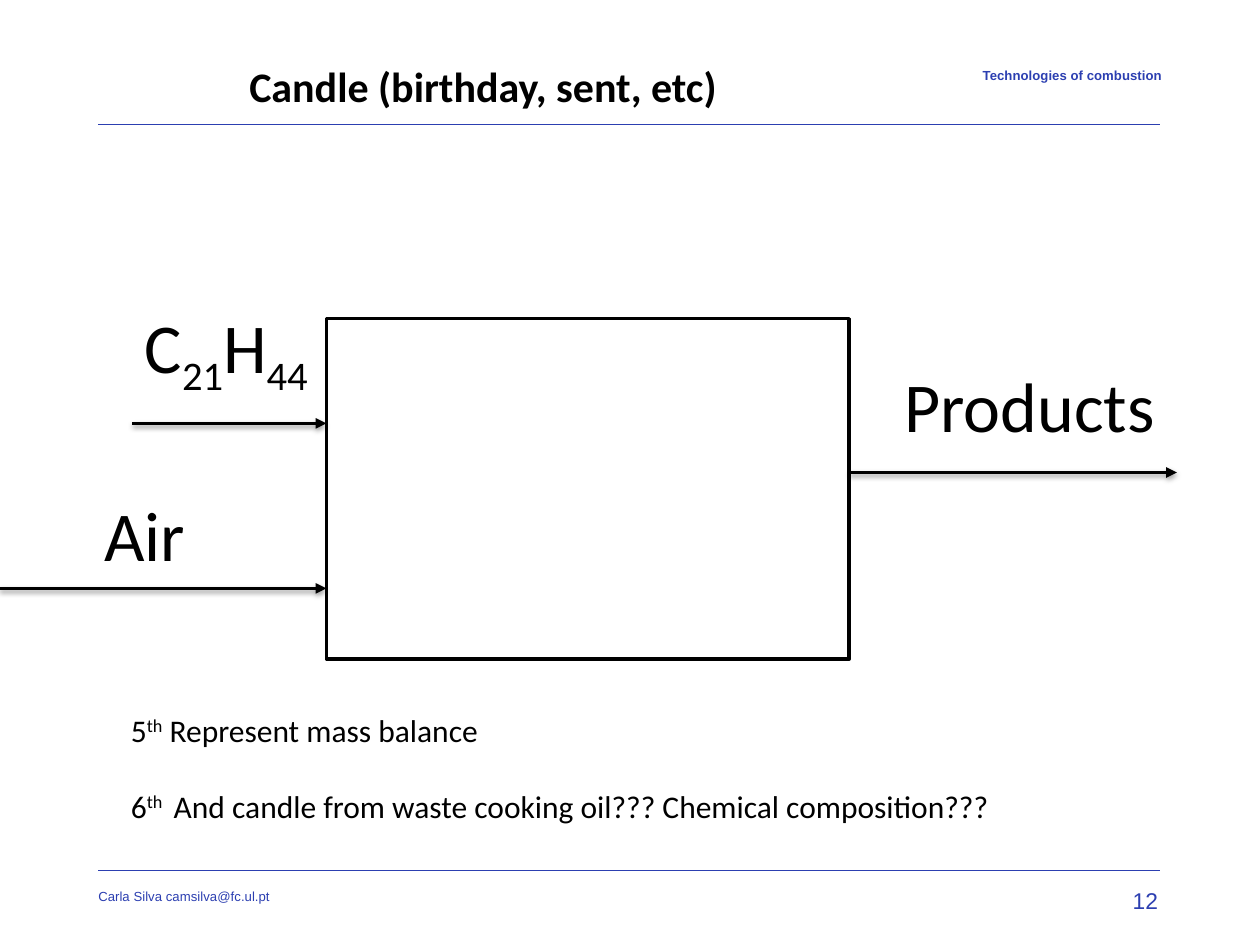
from lxml import etree
from pptx import Presentation
from pptx.dml.color import RGBColor
from pptx.enum.shapes import MSO_CONNECTOR, MSO_SHAPE
from pptx.enum.text import PP_ALIGN
from pptx.oxml.ns import qn
from pptx.util import Inches, Pt

STRAIGHT = MSO_CONNECTOR.STRAIGHT
RECTANGLE = MSO_SHAPE.RECTANGLE
LEFT, RIGHT = PP_ALIGN.LEFT, PP_ALIGN.RIGHT

BLUE = RGBColor(0x2C, 0x3F, 0xB1)
BLACK = RGBColor(0, 0, 0)
WHITE = RGBColor(255, 255, 255)

SUPER, SUB = 30, -25  # baseline shift in percent

# Page frame: left, top, width, height, alignment, paragraphs of (text, baseline)
FRAME_TEXTS = [
    (2.23, 0.46, 6.99, 0.25, RIGHT, [[("Technologies of combustion", SUPER)]], True),
    (0.78, 6.98, 6.99, 0.27, LEFT, [[("Carla Silva camsilva@fc.ul.pt", SUPER)]], False),
    (6.86, 6.99, 2.33, 0.4, RIGHT, [[("12", 0)]], False),
]
RULE_LEFT, RULE_RIGHT = 0.78, 9.21
RULE_YS = [0.99, 6.91]

# Slide texts: left, top, width, height, size, bold, paragraphs
SLIDE_TEXTS = [
    (1.88, 0.43, 4.15, 0.5, 24, True, [[("Candle (birthday, sent, etc)", 0)]]),
    (1.05, 2.36, 1.92, 0.77, 40, False,
     [[("C", 0), ("21", SUB), ("H", 0), ("44", SUB)]]),
    (0.73, 3.85, 1.92, 0.77, 40, False, [[("Air", 0)]]),
    (7.08, 2.83, 2.48, 0.77, 40, False, [[("Products", 0)]]),
    (0.94, 5.59, 7.3, 1.31, 18, False, [
        [("5", 0), ("th", SUPER), (" Represent mass balance", 0)],
        [("6", 0), ("th ", SUPER),
         (" And candle from waste cooking oil??? Chemical composition???", 0)],
    ]),
]
PARAGRAPH_GAP = 22

# Reactor box, and flows as (start x, end x, y)
BOX_LEFT, BOX_TOP, BOX_WIDTH, BOX_HEIGHT = 2.59, 2.53, 4.15, 2.7
BOX_RIGHT = BOX_LEFT + BOX_WIDTH
FLOWS = [
    (1.05, BOX_LEFT, 3.36),
    (0, BOX_LEFT, 4.67),
    (BOX_RIGHT, 9.34, 3.75),
]


def add_text(slide, place, paragraphs, font_name, size, color, bold=False,
             align=LEFT, margins=(0.1, 0.05)):
    frame = slide.shapes.add_textbox(*map(Inches, place)).text_frame
    frame.word_wrap = True
    frame.margin_left = frame.margin_right = Inches(margins[0])
    frame.margin_top = frame.margin_bottom = Inches(margins[1])
    for index, runs in enumerate(paragraphs):
        paragraph = frame.add_paragraph() if index else frame.paragraphs[0]
        paragraph.alignment = align
        if index:
            paragraph.space_before = Pt(PARAGRAPH_GAP)
        for text, baseline in runs:
            run = paragraph.add_run()
            run.text = text
            run.font.name = font_name
            run.font.size = Pt(size)
            run.font.bold = bold
            run.font.color.rgb = color
            if baseline:
                run.font._element.set("baseline", str(baseline * 1000))


def add_line(slide, x1, x2, y, color, width):
    """Add a horizontal line; return it with its empty effect list."""
    line = slide.shapes.add_connector(
        STRAIGHT, Inches(x1), Inches(y), Inches(x2), Inches(y))
    line.line.color.rgb = color
    line.line.width = Pt(width)
    effects = etree.SubElement(line._element.spPr, qn("a:effectLst"))
    return line, effects


def add_flow(slide, x1, x2, y):
    """Add an arrow with a soft shadow below it."""
    arrow, effects = add_line(slide, x1, x2, y, BLACK, 2)
    etree.SubElement(arrow.line._get_or_add_ln(), qn("a:tailEnd"), type="triangle")
    shadow = etree.SubElement(
        effects, qn("a:outerShdw"), blurRad=str(Pt(3.1)), dist=str(Pt(1.6)),
        dir=str(90 * 60000), rotWithShape="0")
    shade = etree.SubElement(shadow, qn("a:srgbClr"), val=str(BLACK))
    etree.SubElement(shade, qn("a:alpha"), val="38000")


def main():
    deck = Presentation()
    deck.slide_width, deck.slide_height = Inches(10), Inches(7.5)
    slide = deck.slides.add_slide(deck.slide_layouts[6])

    for y in RULE_YS:
        add_line(slide, RULE_LEFT, RULE_RIGHT, y, BLUE, 0.5)
    for *place, align, paragraphs, bold in FRAME_TEXTS:
        add_text(slide, place, paragraphs, "Arial", 13, BLUE, bold, align, (0, 0.05))

    reactor = slide.shapes.add_shape(
        RECTANGLE, Inches(BOX_LEFT), Inches(BOX_TOP),
        Inches(BOX_WIDTH), Inches(BOX_HEIGHT))
    reactor.shadow.inherit = False
    reactor.fill.solid()
    reactor.fill.fore_color.rgb = WHITE
    reactor.line.color.rgb = BLACK
    reactor.line.width = Pt(2)
    for flow in FLOWS:
        add_flow(slide, *flow)

    for *place, size, bold, paragraphs in SLIDE_TEXTS:
        add_text(slide, place, paragraphs, "Calibri", size, BLACK, bold)

    deck.save("out.pptx")


if __name__ == "__main__":
    main()
